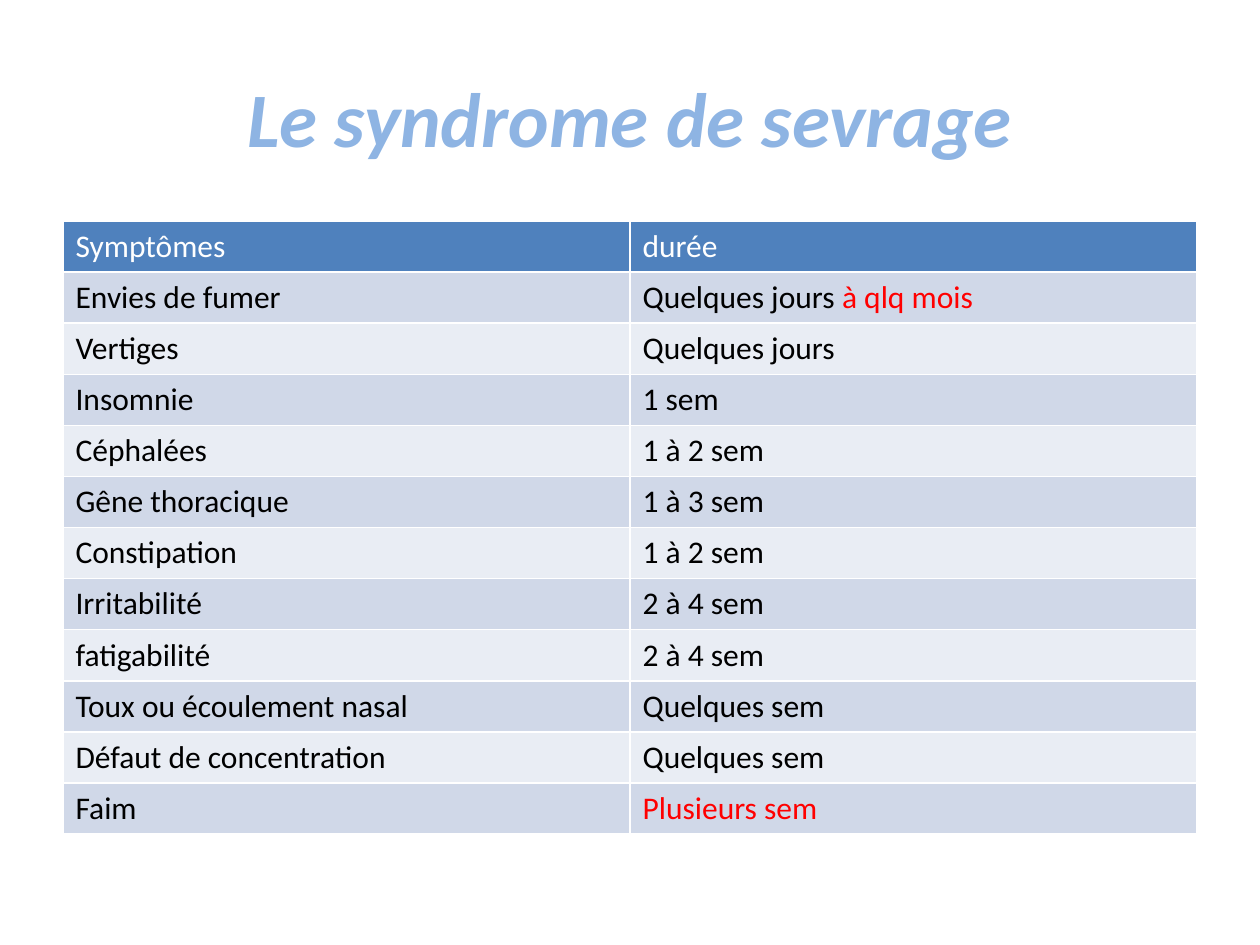
from pptx import Presentation
from pptx.dml.color import RGBColor
from pptx.enum.text import MSO_ANCHOR, PP_ALIGN
from pptx.util import Inches, Pt

PX = Inches(1) / 126
FONT = "Calibri"
TITLE_BLUE = RGBColor(0x8E, 0xB4, 0xE3)
HEADER_BLUE = RGBColor(0x4F, 0x81, 0xBD)
BANDS = (RGBColor(0xD0, 0xD8, 0xE8), RGBColor(0xE9, 0xED, 0xF4))
WHITE = RGBColor(0xFF, 0xFF, 0xFF)
BLACK = RGBColor(0x00, 0x00, 0x00)
RED = RGBColor(0xFF, 0x00, 0x00)

HEADINGS = ("Symptômes", "durée")
SYMPTOMS = (
    ("Envies de fumer", "Quelques jours ", "à qlq mois"),
    ("Vertiges", "Quelques jours", ""),
    ("Insomnie", "1 sem", ""),
    ("Céphalées", "1 à 2 sem", ""),
    ("Gêne thoracique", "1 à 3 sem", ""),
    ("Constipation", "1 à 2 sem", ""),
    ("Irritabilité", "2 à 4 sem", ""),
    ("fatigabilité", "2 à 4 sem", ""),
    ("Toux ou écoulement nasal", "Quelques sem", ""),
    ("Défaut de concentration", "Quelques sem", ""),
    ("Faim", "", "Plusieurs sem"),
)


def px(length):
    """Turn a length in px into EMU."""
    return round(length * PX)


def place_title(slide, box, wording):
    """Move the title placeholder into the box and format it."""
    title = slide.shapes.title
    title.left, title.top, title.width, title.height = map(px, box)
    frame = title.text_frame
    frame.text = wording
    frame.vertical_anchor = MSO_ANCHOR.MIDDLE
    heading = frame.paragraphs[0]
    heading.alignment = PP_ALIGN.CENTER
    heading.font.name = FONT
    heading.font.size = Pt(44)
    heading.font.bold = heading.font.italic = True
    heading.font.color.rgb = TITLE_BLUE


def fill_cell(cell, background, *pieces):
    """Fill a cell and write its (wording, colour) pieces."""
    cell.fill.solid()
    cell.fill.fore_color.rgb = background
    line = cell.text_frame.paragraphs[0]
    line.font.name = FONT
    line.font.size = Pt(18)
    line.font.bold = False
    for wording, colour in pieces:
        if wording:
            run = line.add_run()
            run.text = wording
            run.font.bold = False
            run.font.color.rgb = colour


def place_symptoms(slide, box):
    """Build the table of symptoms and durations in the box."""
    table = slide.shapes.add_table(
        len(SYMPTOMS) + 1, len(HEADINGS), *map(px, box)
    ).table
    for column, heading in enumerate(HEADINGS):
        fill_cell(table.cell(0, column), HEADER_BLUE, (heading, WHITE))
    for row, (symptom, duration, warning) in enumerate(SYMPTOMS, start=1):
        band = BANDS[(row - 1) % 2]
        fill_cell(table.cell(row, 0), band, (symptom, BLACK))
        fill_cell(table.cell(row, 1), band, (duration, BLACK), (warning, RED))


def main():
    """Build and save the slide."""
    deck = Presentation()
    deck.slide_width, deck.slide_height = px(1260), px(945)
    slide = deck.slides.add_slide(deck.slide_layouts[5])
    place_title(slide, (63, 38, 1134, 158), "Le syndrome de sevrage")
    place_symptoms(slide, (63, 221, 1134, 613))
    deck.save("out.pptx")


if __name__ == "__main__":
    main()
